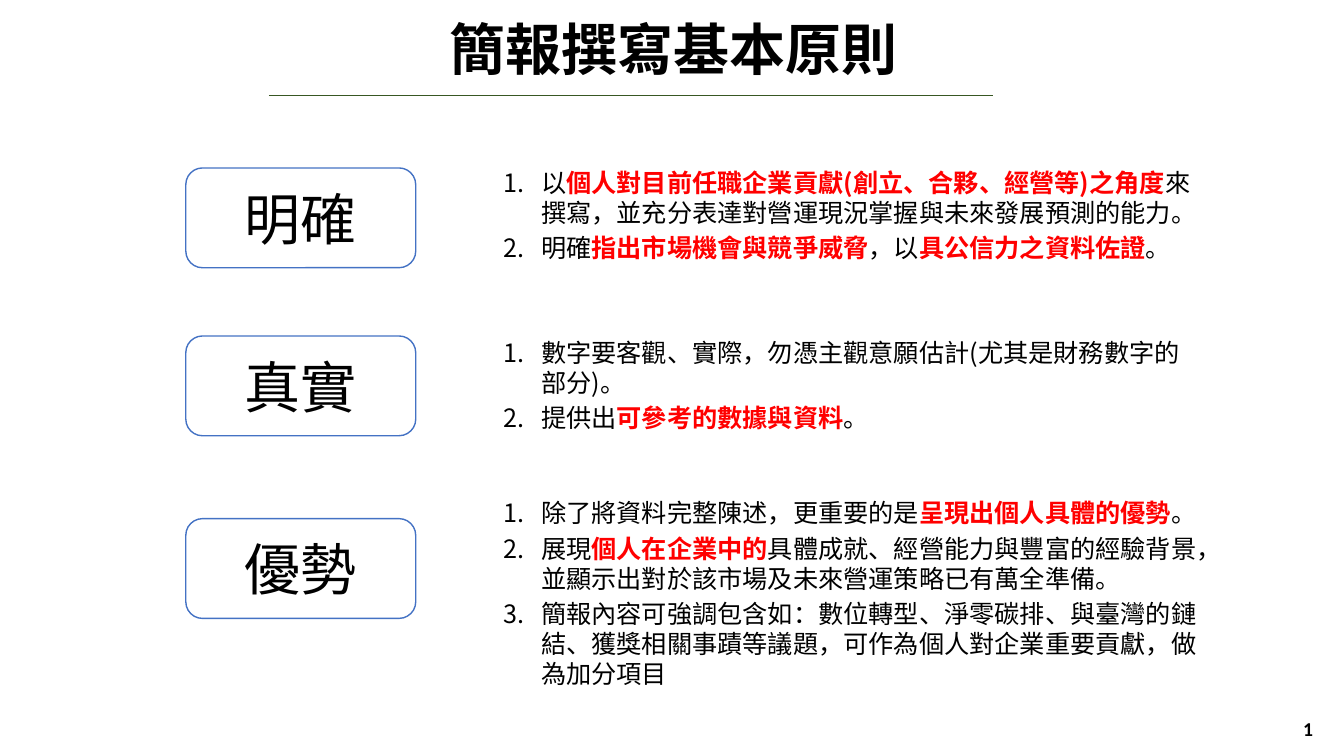
"""Build the slide on the basic principles of writing a briefing."""
from dataclasses import dataclass

import pptx
import pptx.dml.color
import pptx.enum.shapes
import pptx.enum.text
import pptx.oxml.ns
import pptx.shapes.base
import pptx.slide
import pptx.text.text
import pptx.util
from lxml import etree

PX = 9525
FONT = "Noto Sans CJK SC"
BLACK = pptx.dml.color.RGBColor(0x00, 0x00, 0x00)
WHITE = pptx.dml.color.RGBColor(0xFF, 0xFF, 0xFF)
RED = pptx.dml.color.RGBColor(0xFF, 0x00, 0x00)
BLUE = pptx.dml.color.RGBColor(0x44, 0x72, 0xC4)
GREEN = pptx.dml.color.RGBColor(0x38, 0x57, 0x23)
ALIGN = pptx.enum.text.PP_ALIGN
ANCHOR = pptx.enum.text.MSO_ANCHOR


@dataclass
class Rule:
    """A principle; text between bars in its points is stressed."""

    name: str
    box_top: int
    top: int
    height: int
    anchor: ANCHOR
    points: list[str]


RULES = [
    Rule("明確", 160, 155, 106, ANCHOR.TOP, [
        "以|個人對目前任職企業貢獻(創立、合夥、經營等)之角度|"
        "來撰寫，並充分表達對營運現況掌握與未來發展預測的能力。",
        "明確|指出市場機會與競爭威脅|，以|具公信力之資料佐證|。",
    ]),
    Rule("真實", 320, 314, 106, ANCHOR.MIDDLE, [
        "數字要客觀、實際，勿憑主觀意願估計(尤其是財務數字的部分)。",
        "提供出|可參考的數據與資料|。",
    ]),
    Rule("優勢", 494, 473, 184, ANCHOR.MIDDLE, [
        "除了將資料完整陳述，更重要的是|呈現出個人具體的優勢|。",
        "展現|個人在企業中的|具體成就、經營能力與豐富的經驗背景，"
        "並顯示出對於該市場及未來營運策略已有萬全準備。",
        "簡報內容可強調包含如：數位轉型、淨零碳排、與臺灣的鏈結、"
        "獲獎相關事蹟等議題，可作為個人對企業重要貢獻，做為加分項目",
    ]),
]


def px(*sizes: int) -> list[int]:
    """Turn pixels into EMU."""
    return [size * PX for size in sizes]


def style(run: pptx.text.text._Run, size: int, bold: bool = False,
          color: pptx.dml.color.RGBColor = BLACK, face: str = FONT) -> None:
    """Format one run, with the same face for Latin and East Asian text."""
    run.font.size = pptx.util.Pt(size)
    run.font.bold = bold
    run.font.color.rgb = color
    run.font.name = face
    asian = etree.SubElement(run.font._element, pptx.oxml.ns.qn("a:ea"))
    asian.set("typeface", face)


def label(shape: pptx.shapes.base.BaseShape, text: str, size: int,
          align: ALIGN, bold: bool = False, face: str = FONT) -> None:
    """Fill a shape with one line of text, centred in height."""
    frame = shape.text_frame
    frame.text = text
    frame.word_wrap = True
    frame.vertical_anchor = ANCHOR.MIDDLE
    frame.paragraphs[0].alignment = align
    style(frame.paragraphs[0].runs[0], size, bold, face=face)


def draw_title(slide: pptx.slide.Slide) -> None:
    """Place the title and the line below it."""
    title = slide.shapes.title
    title.left, title.top, title.width, title.height = px(4, 6, 1275, 79)
    label(title, "簡報撰寫基本原則", 40, ALIGN.CENTER, True)
    title.text_frame.paragraphs[0].line_spacing = pptx.util.Pt(48)
    line = slide.shapes.add_connector(
        pptx.enum.shapes.MSO_CONNECTOR.STRAIGHT, *px(256, 91, 946, 91))
    line.line.color.rgb = GREEN
    line.line.width = pptx.util.Pt(0.5)
    etree.SubElement(line._element.spPr, pptx.oxml.ns.qn("a:effectLst"))


def draw_box(slide: pptx.slide.Slide, rule: Rule) -> None:
    """Draw the rounded box that names a principle."""
    box = slide.shapes.add_shape(
        pptx.enum.shapes.MSO_SHAPE.ROUNDED_RECTANGLE,
        *px(177, rule.box_top, 219, 95))
    box.shadow.inherit = False
    box.fill.solid()
    box.fill.fore_color.rgb = WHITE
    tint = box._element.spPr.find(".//" + pptx.oxml.ns.qn("a:srgbClr"))
    etree.SubElement(tint, pptx.oxml.ns.qn("a:alpha")).set("val", "30000")
    box.line.color.rgb = BLUE
    box.line.width = pptx.util.Pt(1)
    label(box, rule.name, 40, ALIGN.CENTER)


def draw_points(slide: pptx.slide.Slide, rule: Rule) -> None:
    """Write the numbered points of a principle."""
    area = slide.shapes.add_textbox(*px(470, rule.top, 680, rule.height))
    frame = area.text_frame
    frame.word_wrap = True
    frame.vertical_anchor = rule.anchor
    for order, point in enumerate(rule.points):
        para = frame.add_paragraph() if order else frame.paragraphs[0]
        para.line_spacing = pptx.util.Pt(21.5)
        para.space_before = pptx.util.Pt(3.6 if order else 0)
        props = para._p.get_or_add_pPr()
        props.set("marL", str(36 * PX))
        props.set("indent", str(-36 * PX))
        number = etree.SubElement(props, pptx.oxml.ns.qn("a:buAutoNum"))
        number.set("type", "arabicPeriod")
        for part, text in enumerate(point.split("|")):
            run = para.add_run()
            run.text = text
            stress = part % 2 == 1
            style(run, 18, stress, RED if stress else BLACK)


def main() -> None:
    """Build and save the slide."""
    deck = pptx.Presentation()
    deck.slide_width, deck.slide_height = px(1280, 720)
    slide = deck.slides.add_slide(deck.slide_layouts.get_by_name("Title Only"))
    draw_title(slide)
    for rule in RULES:
        draw_box(slide, rule)
        draw_points(slide, rule)
    page = slide.shapes.add_textbox(*px(972, 675, 288, 38))
    label(page, "1", 14, ALIGN.RIGHT, True, "Calibri")
    deck.save("out.pptx")


if __name__ == "__main__":
    main()
